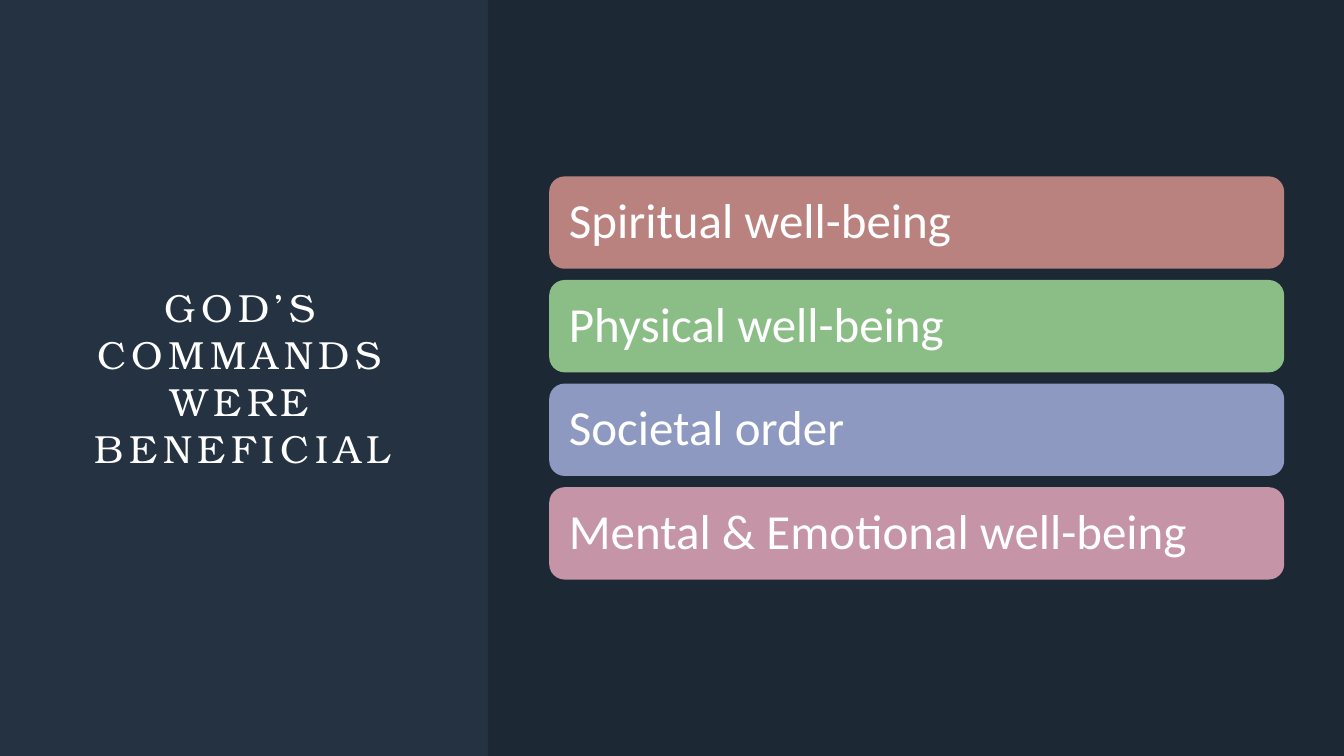
from lxml import etree
from pptx import Presentation
from pptx.dml.color import RGBColor
from pptx.enum.shapes import MSO_SHAPE
from pptx.enum.text import MSO_ANCHOR, MSO_AUTO_SIZE, PP_ALIGN
from pptx.oxml.ns import qn
from pptx.util import Pt

RECTANGLE = MSO_SHAPE.RECTANGLE
ROUNDED = MSO_SHAPE.ROUNDED_RECTANGLE
MIDDLE = MSO_ANCHOR.MIDDLE
CENTER, LEFT = PP_ALIGN.CENTER, PP_ALIGN.LEFT

COLORS = {
    "background": "243241",
    "panel": "000000",
    "text": "FFFFFF",
    "rose": "BA827F",
    "green": "8BBE86",
    "blue": "8D99C1",
    "pink": "C594A6",
}
BENEFITS = [
    ("Spiritual well-being", "rose"),
    ("Physical well-being", "green"),
    ("Societal order", "blue"),
    ("Mental & Emotional well-being", "pink"),
]


def add_filled_shape(kind, left, top, width, height, color):
    shape = page.shapes.add_shape(kind, Pt(left), Pt(top), Pt(width), Pt(height))
    shape.shadow.inherit = False
    shape.fill.solid()
    shape.fill.fore_color.rgb = RGBColor.from_string(COLORS[color])
    shape.line.fill.background()
    return shape


def format_text(frame, margin, alignment, font_name, size):
    frame.word_wrap = True
    frame.auto_size = MSO_AUTO_SIZE.NONE
    frame.vertical_anchor = MIDDLE
    frame.margin_left = frame.margin_right = Pt(margin)
    frame.margin_top = frame.margin_bottom = Pt(margin)
    para = frame.paragraphs[0]
    para.alignment = alignment
    font = para.runs[0].font
    font.name = font_name
    font.size = Pt(size)
    font.color.rgb = RGBColor.from_string(COLORS["text"])
    return para


# Page and background
deck = Presentation()
deck.slide_width, deck.slide_height = Pt(960), Pt(540)
page = deck.slides.add_slide(deck.slide_layouts[5])
page.background.fill.solid()
page.background.fill.fore_color.rgb = RGBColor.from_string(COLORS["background"])

# Title on the left
title = page.shapes.title
title.left, title.top, title.width, title.height = Pt(42.5), Pt(85), Pt(261.4), Pt(369.4)
title.text_frame.text = "GOD’S COMMANDS WERE BENEFICIAL"
para = format_text(title.text_frame, 0, CENTER, "TeX Gyre Bonum", 28)
para.runs[0].font._element.set("spc", "400")

# Translucent panel on the right
panel = add_filled_shape(RECTANGLE, 348.5, 0, 611.5, 540, "panel")
panel_color = panel._element.spPr.find(qn("a:solidFill"))[0]
etree.SubElement(panel_color, qn("a:alpha")).set("val", "20000")

# Stack of benefits
BAR_TOP, BAR_HEIGHT, BAR_GAP = 126, 66, 8
for index, (label, color) in enumerate(BENEFITS):
    top = BAR_TOP + index * (BAR_HEIGHT + BAR_GAP)
    bar = add_filled_shape(ROUNDED, 392.3, top, 525, BAR_HEIGHT, color)
    bar.text_frame.text = label
    para = format_text(bar.text_frame, 10.8, LEFT, "Calibri", 35)
    para.line_spacing = 0.9

deck.save("out.pptx")
